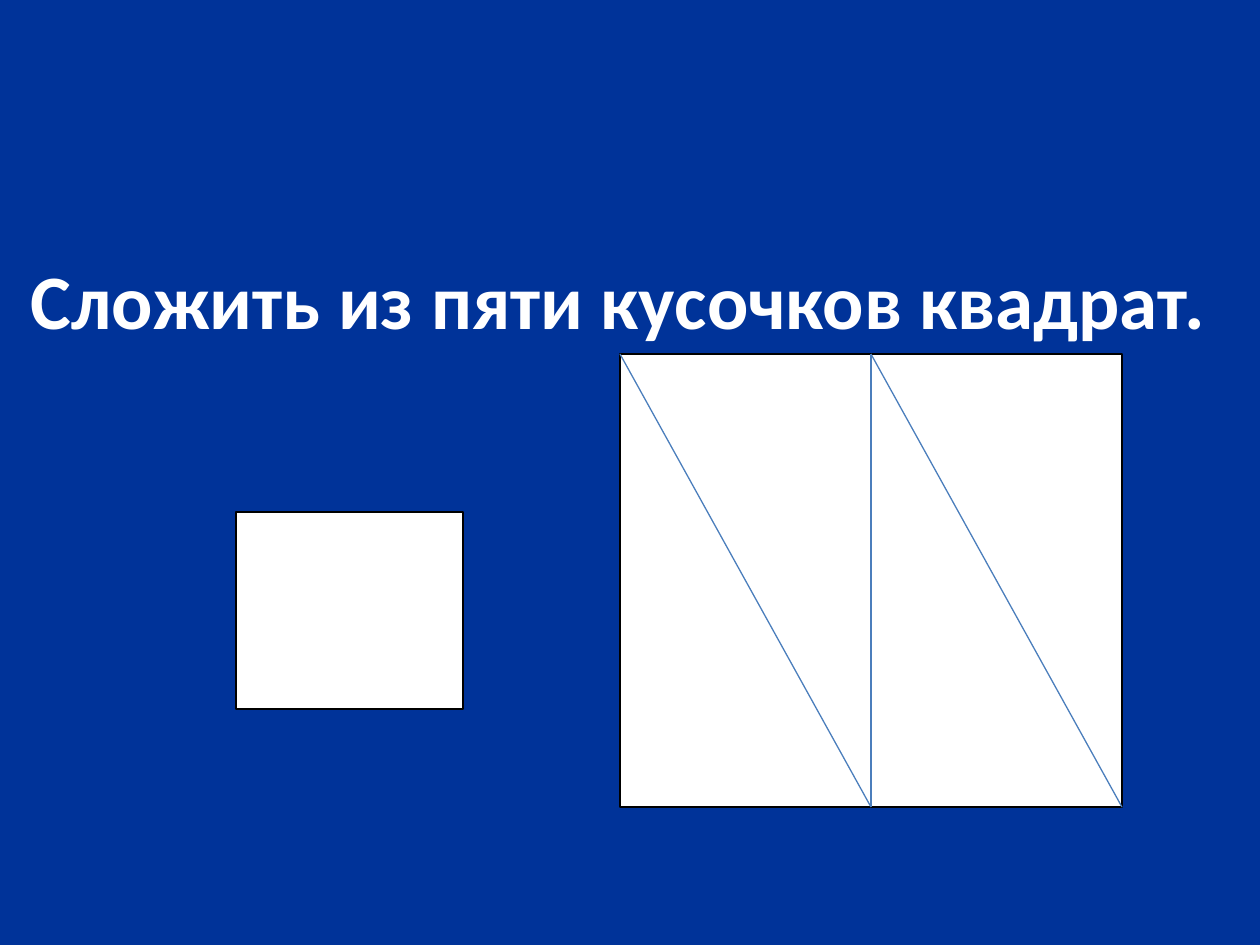
from lxml import etree
from pptx import Presentation
from pptx.dml.color import RGBColor
from pptx.enum.shapes import MSO_CONNECTOR, MSO_SHAPE
from pptx.enum.text import MSO_ANCHOR, PP_ALIGN
from pptx.oxml.ns import qn
from pptx.util import Pt

EMU_PER_PX = 914400 // 126
SLIDE_SIZE = (1260, 945)
TITLE_ONLY = 5
RECTANGLE = MSO_SHAPE.RECTANGLE
STRAIGHT = MSO_CONNECTOR.STRAIGHT
MIDDLE = MSO_ANCHOR.MIDDLE
CENTER = PP_ALIGN.CENTER
TOP_SIDE, BOTTOM_SIDE = 0, 2
FONT = "Calibri"
LINE_WIDTH = Pt(0.75)
COLORS = {
    "background": "003399",
    "paper": "FFFFFF",
    "outline": "000000",
    "cut": "4B7EBC",
    "title": "FFFFFF",
}


def px(length):
    return int(length * EMU_PER_PX)


def color(name):
    return RGBColor.from_string(COLORS[name])


def set_background(slide):
    fill = slide.background.fill
    fill.solid()
    fill.fore_color.rgb = color("background")


def set_title(slide, text, left, top, width, height):
    title = slide.shapes.title
    title.left, title.top = px(left), px(top)
    title.width, title.height = px(width), px(height)
    frame = title.text_frame
    frame.word_wrap = True
    frame.vertical_anchor = MIDDLE
    frame.margin_left, frame.margin_right = px(12), px(34)
    frame.margin_top, frame.margin_bottom = px(6), px(44)
    paragraph = frame.paragraphs[0]
    paragraph.alignment = CENTER
    run = paragraph.add_run()
    run.text = text
    run.font.name = FONT
    run.font.size = Pt(44)
    run.font.bold = True
    run.font.color.rgb = color("title")


def add_paper(slide, left, top, width, height):
    shape = slide.shapes.add_shape(RECTANGLE, px(left), px(top), px(width), px(height))
    shape.shadow.inherit = False
    shape.fill.solid()
    shape.fill.fore_color.rgb = color("paper")
    shape.line.color.rgb = color("outline")
    shape.line.width = LINE_WIDTH
    return shape


def add_cut(slide, start, end):
    points = [px(value) for value in (*start, *end)]
    connector = slide.shapes.add_connector(STRAIGHT, *points)
    connector.line.color.rgb = color("cut")
    connector.line.width = LINE_WIDTH
    properties = connector._element.spPr
    etree.SubElement(properties, qn("a:effectLst"))
    return connector


def add_cut_paper(slide, left, top, width, height):
    """Halve a sheet vertically, then cut each half along its diagonal."""
    paper = add_paper(slide, left, top, width, height)
    half = width // 2
    middle, bottom = left + half, top + height
    divider = add_cut(slide, (middle, top), (middle, bottom))
    divider.begin_connect(paper, TOP_SIDE)
    divider.end_connect(paper, BOTTOM_SIDE)
    for start in (left, middle):
        add_cut(slide, (start, top), (start + half, bottom))


def main():
    presentation = Presentation()
    presentation.slide_width, presentation.slide_height = map(px, SLIDE_SIZE)
    slide = presentation.slides.add_slide(presentation.slide_layouts[TITLE_ONLY])
    set_background(slide)
    set_title(slide, "Сложить из пяти кусочков квадрат.", 0, 246, 1260, 144)
    add_paper(slide, 236, 512, 227, 197)
    add_cut_paper(slide, 620, 354, 502, 453)
    presentation.save("out.pptx")


if __name__ == "__main__":
    main()
